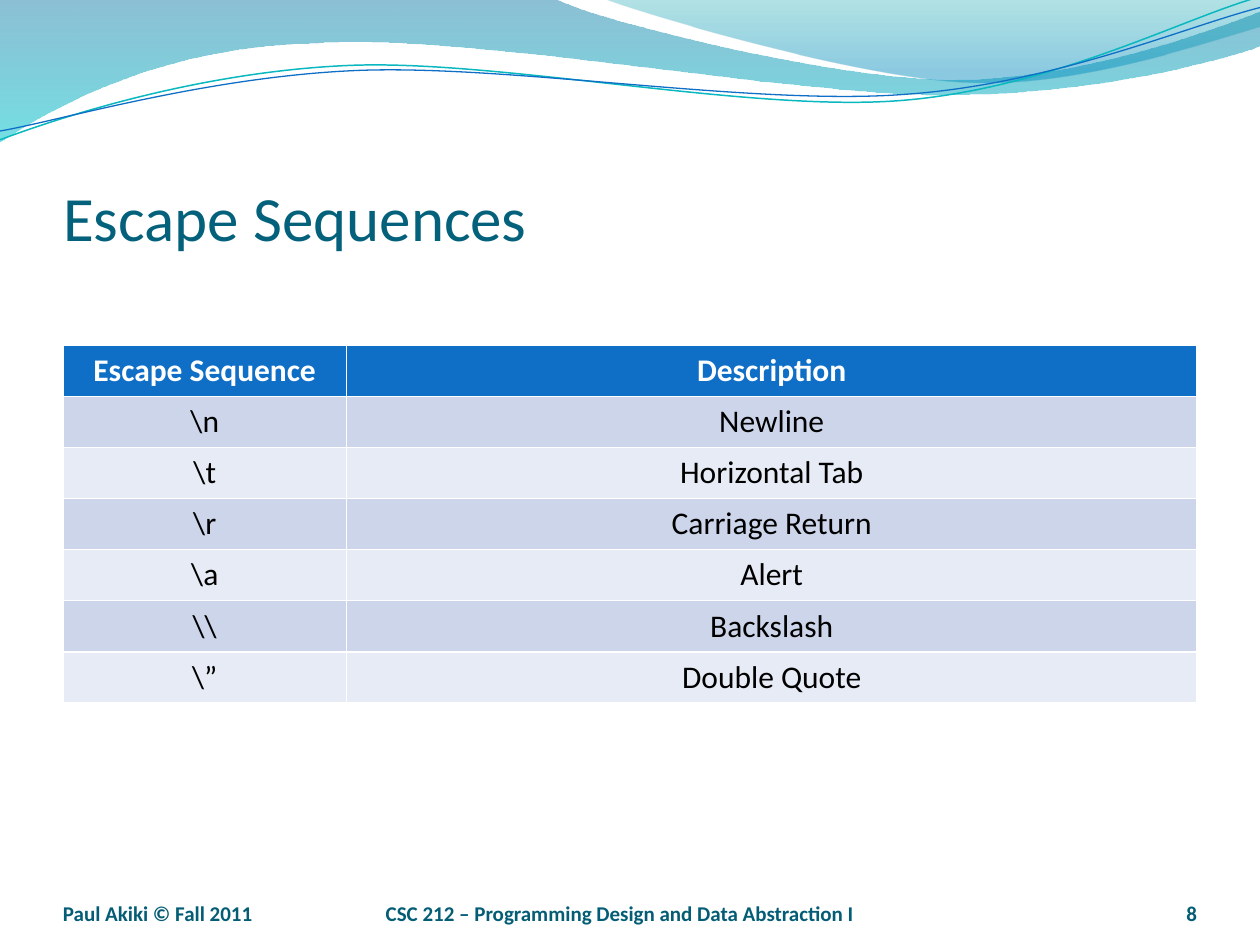
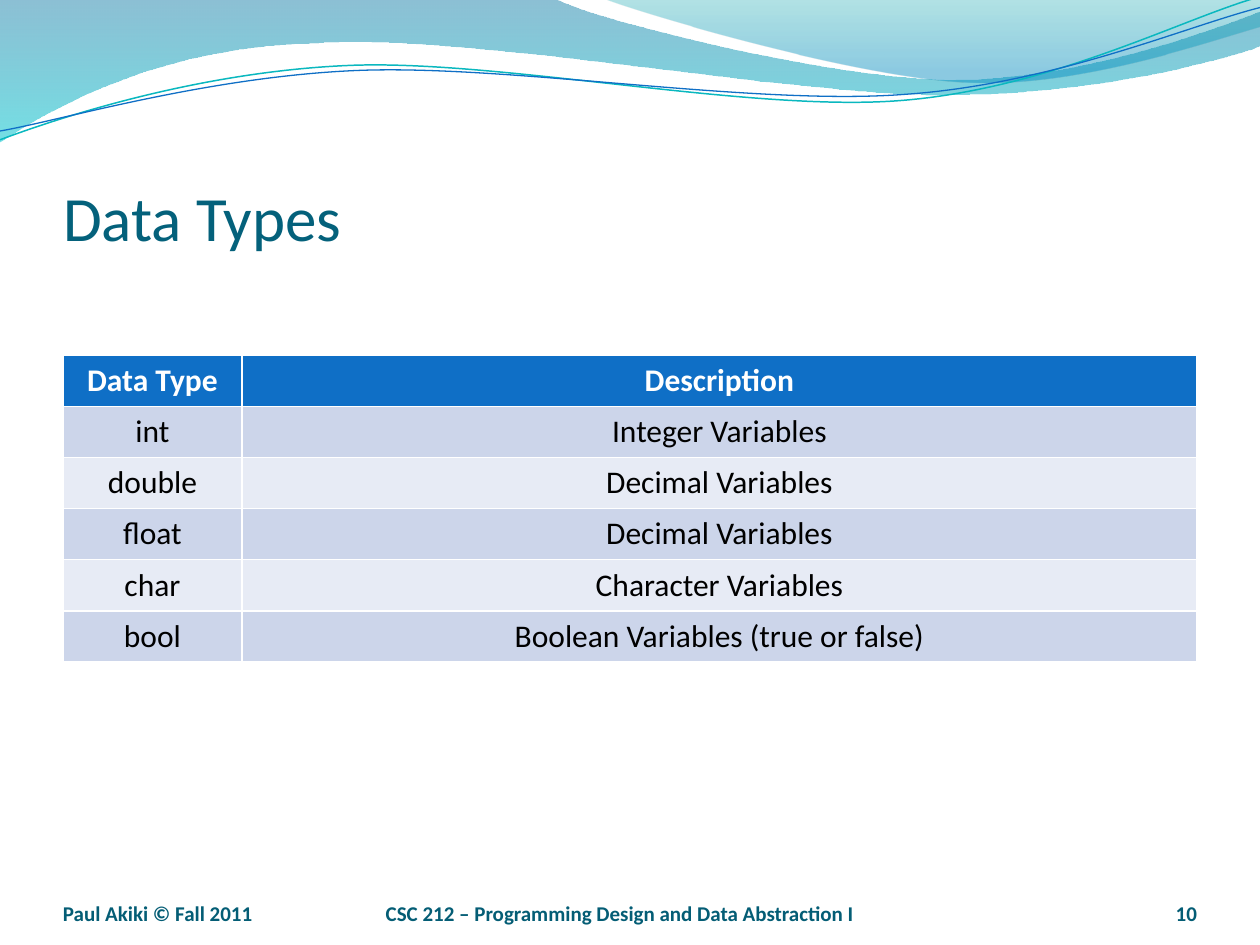
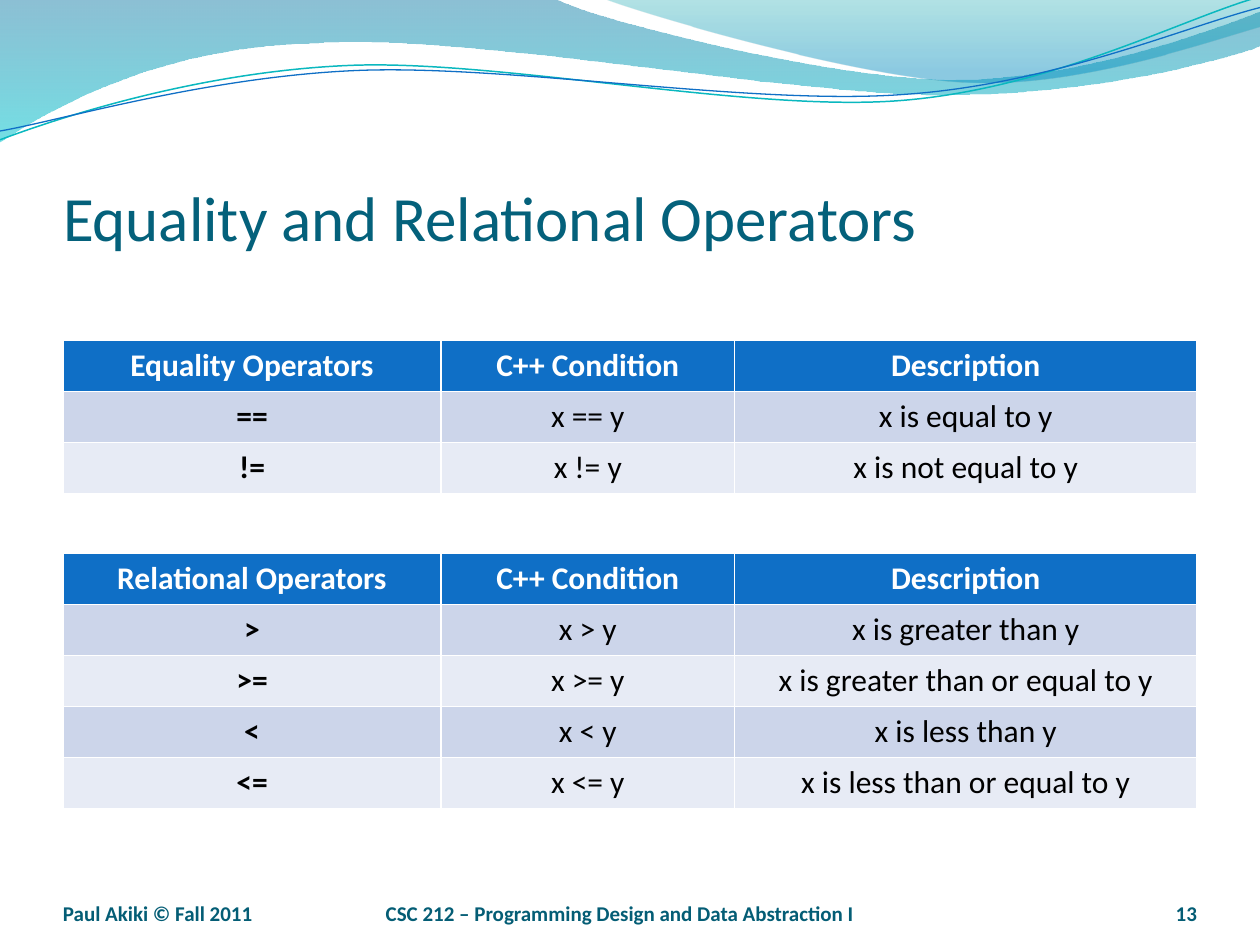
from lxml import etree
from pptx import Presentation
from pptx.dml.color import RGBColor
from pptx.enum.text import MSO_ANCHOR, MSO_AUTO_SIZE, PP_ALIGN
from pptx.oxml.ns import qn
from pptx.util import Inches, Pt

LEFT, CENTER, RIGHT = PP_ALIGN.LEFT, PP_ALIGN.CENTER, PP_ALIGN.RIGHT
BOTTOM = MSO_ANCHOR.BOTTOM
NO_AUTOFIT = MSO_AUTO_SIZE.NONE

WHITE = RGBColor(0xFF, 0xFF, 0xFF)
BLACK = RGBColor(0x00, 0x00, 0x00)
TITLE_TEAL = RGBColor(0x04, 0x61, 0x7B)
FOOTER_TEAL = RGBColor(0x04, 0x5D, 0x75)
HEADER_BLUE = RGBColor(0x0F, 0x6F, 0xC6)
LINE_TEAL = RGBColor(0x0A, 0xB8, 0xBF)
ROW_FILLS = [RGBColor(0xCC, 0xD5, 0xEA), RGBColor(0xE7, 0xEB, 0xF5)]
WAVE_BLUE = RGBColor(0x00, 0x74, 0xA1)
WAVE_CYAN = RGBColor(0x00, 0xC6, 0xCF)
CREST_GREEN = RGBColor(0x00, 0xA1, 0xA9)
CREST_BLUE = RGBColor(0x00, 0x8B, 0xBF)

FONT = "Calibri"
MARGIN = Inches(0.5)
CONTENT_WIDTH = Inches(9)
ROW_HEIGHT = Pt(29.2)

# Each outline is a list of points (2 numbers) and Bézier segments (6 numbers), in inches.
# Waves: outline, then (position, colour, opacity in %) for each gradient stop.
WAVES = [
    ([(0, 0), (4.4, -0.01), (4.76, 0.17, 6.64, 0.63, 7.58, 0.63),
      (8.53, 0.63, 9.58, 0.26, 10, 0.09), (10.01, 0.36),
      (9.83, 0.44, 8.7, 0.76, 7.46, 0.75), (6.22, 0.75, 3.82, 0.28, 2.57, 0.34),
      (1.29, 0.36, 0.46, 0.83, -0.01, 1.13), (0, 0)],
     [(0, WAVE_BLUE, 45), (1, WAVE_CYAN, 55)]),
    ([(4.79, -0.01), (5.09, 0.11, 6.82, 0.62, 7.69, 0.65),
      (8.56, 0.69, 9.61, 0.32, 10, 0.21), (10, 0), (4.79, -0.01)],
     [(0, CREST_GREEN, 30), (0.8, CREST_BLUE, 45)]),
]
# Ripples: outline, colour, line width in points.
RIPPLES = [
    ([(0, 1.11), (0.48, 0.93, 1.58, 0.57, 2.77, 0.52),
      (3.95, 0.47, 5.93, 0.89, 7.13, 0.8), (8.33, 0.71, 9.38, 0.15, 9.98, -0.02)],
     LINE_TEAL, 0.85),
    ([(0, 1.04), (0.47, 0.96, 1.64, 0.61, 2.83, 0.56),
      (4.03, 0.51, 5.97, 0.84, 7.17, 0.75), (8.36, 0.67, 9.41, 0.21, 10, 0.06)],
     HEADER_BLUE, 0.75),
]

OPERATOR_COLUMNS = [3, 2.33, 3.67]
# Slides: title, page number, tables as (top, column widths, bold first column, rows).
SLIDES = [
    ("Escape Sequences", "8", [
        (2.74, [2.25, 6.75], False, [
            ("Escape Sequence", "Description"),
            (r"\n", "Newline"),
            (r"\t", "Horizontal Tab"),
            (r"\r", "Carriage Return"),
            (r"\a", "Alert"),
            (r"\\", "Backslash"),
            (r"\”", "Double Quote"),
        ]),
    ]),
    ("Data Types", "10", [
        (2.82, [1.42, 7.58], False, [
            ("Data Type", "Description"),
            ("int", "Integer Variables"),
            ("double", "Decimal Variables"),
            ("float", "Decimal Variables"),
            ("char", "Character Variables"),
            ("bool", "Boolean Variables (true or false)"),
        ]),
    ]),
    ("Equality and Relational Operators", "13", [
        (4.39, OPERATOR_COLUMNS, True, [
            ("Relational Operators", "C++ Condition", "Description"),
            (">", "x > y", "x is greater than y"),
            (">=", "x >= y", "x is greater than or equal to y"),
            ("<", "x < y", "x is less than y"),
            ("<=", "x <= y", "x is less than or equal to y"),
        ]),
        (2.7, OPERATOR_COLUMNS, True, [
            ("Equality Operators", "C++ Condition", "Description"),
            ("==", "x == y", "x is equal to y"),
            ("!=", "x != y", "x is not equal to y"),
        ]),
    ]),
]


def draw_outline(slide, outline, closed):
    """Trace every point as a line, then join each Bézier's three points into one curve."""
    points = [(Inches(x), Inches(y)) for segment in outline
              for x, y in zip(segment[::2], segment[1::2])]
    builder = slide.shapes.build_freeform(*points[0])
    builder.add_line_segments(points[1:], close=closed)
    shape = builder.convert_to_shape()
    shape.shadow.inherit = False
    lines = iter(list(shape.element.iter(qn("a:lnTo"))))
    for segment in outline[1:]:
        first = next(lines)
        if len(segment) == 6:
            curve = etree.Element(qn("a:cubicBezTo"))
            first.addprevious(curve)
            for line in (first, next(lines), next(lines)):
                curve.append(line[0])
                line.getparent().remove(line)
    return shape


def style_text(frame, size, color, align, bold=False):
    paragraph = frame.paragraphs[0]
    paragraph.alignment = align
    font = paragraph.runs[0].font
    font.name, font.size, font.bold = FONT, Pt(size), bold
    font.color.rgb = color


prs = Presentation()
prs.slide_width, prs.slide_height = Inches(10), Inches(7.5)
layout = prs.slide_layouts.get_by_name("Title Only")

for page, (title_text, page_number, tables) in enumerate(SLIDES):
    slide = prs.slides.add_slide(layout)

    # The band is drawn once and moved to the layout that all slides use.
    if page == 0:
        band = []
        for outline, stops in WAVES:
            wave = draw_outline(slide, outline, closed=True)
            wave.line.fill.background()
            wave.fill.gradient()
            wave.fill.gradient_angle = 270
            for stop, (position, color, _) in zip(wave.fill.gradient_stops, stops):
                stop.position = position
                stop.color.rgb = color
            for rgb, (_, _, opacity) in zip(wave.element.iter(qn("a:srgbClr")), stops):
                etree.SubElement(rgb, qn("a:alpha"), val=str(opacity * 1000))
            band.append(wave)
        for outline, color, width in RIPPLES:
            ripple = draw_outline(slide, outline, closed=False)
            ripple.fill.background()
            ripple.line.color.rgb = color
            ripple.line.width = Pt(width)
            band.append(ripple)
        for part in band:
            layout.shapes.element.append(part.element)

    title = slide.shapes.title
    title.left, title.top = MARGIN, Inches(0.77)
    title.width, title.height = CONTENT_WIDTH, Inches(1.25)
    heading = title.text_frame
    heading.text = title_text
    heading.auto_size = NO_AUTOFIT
    heading.vertical_anchor = BOTTOM
    heading.margin_left = heading.margin_right = heading.margin_bottom = 0
    heading.margin_top = Inches(0.05)
    style_text(heading, 36, TITLE_TEAL, LEFT)

    # White cell borders come from the default table style.
    for top, widths, bold_first, rows in tables:
        table = slide.shapes.add_table(
            len(rows), len(widths), MARGIN, Inches(top),
            CONTENT_WIDTH, ROW_HEIGHT * len(rows)).table
        for column, width in zip(table.columns, widths):
            column.width = Inches(width)
        for r, row in enumerate(rows):
            table.rows[r].height = ROW_HEIGHT
            is_header = r == 0
            for c, text in enumerate(row):
                cell = table.cell(r, c)
                cell.text = text
                style_text(cell.text_frame, 18, WHITE if is_header else BLACK, CENTER,
                           bold=is_header or (bold_first and c == 0))
                cell.fill.solid()
                cell.fill.fore_color.rgb = HEADER_BLUE if is_header else ROW_FILLS[(r - 1) % 2]

    footers = [
        ("CSC 212 – Programming Design and Data Abstraction I", 2.92, 4, CENTER),
        (page_number, 8.67, 0.83, RIGHT),
        ("Paul Akiki © Fall 2011", 0.5, 2.33, LEFT),
    ]
    for text, left, width, align in footers:
        footer = slide.shapes.add_textbox(
            Inches(left), Inches(6.95), Inches(width), Inches(0.4)).text_frame
        footer.text = text
        footer.word_wrap = True
        footer.vertical_anchor = BOTTOM
        footer.margin_left = footer.margin_right = footer.margin_top = footer.margin_bottom = 0
        style_text(footer, 12, FOOTER_TEAL, align, bold=True)

prs.save("out.pptx")
